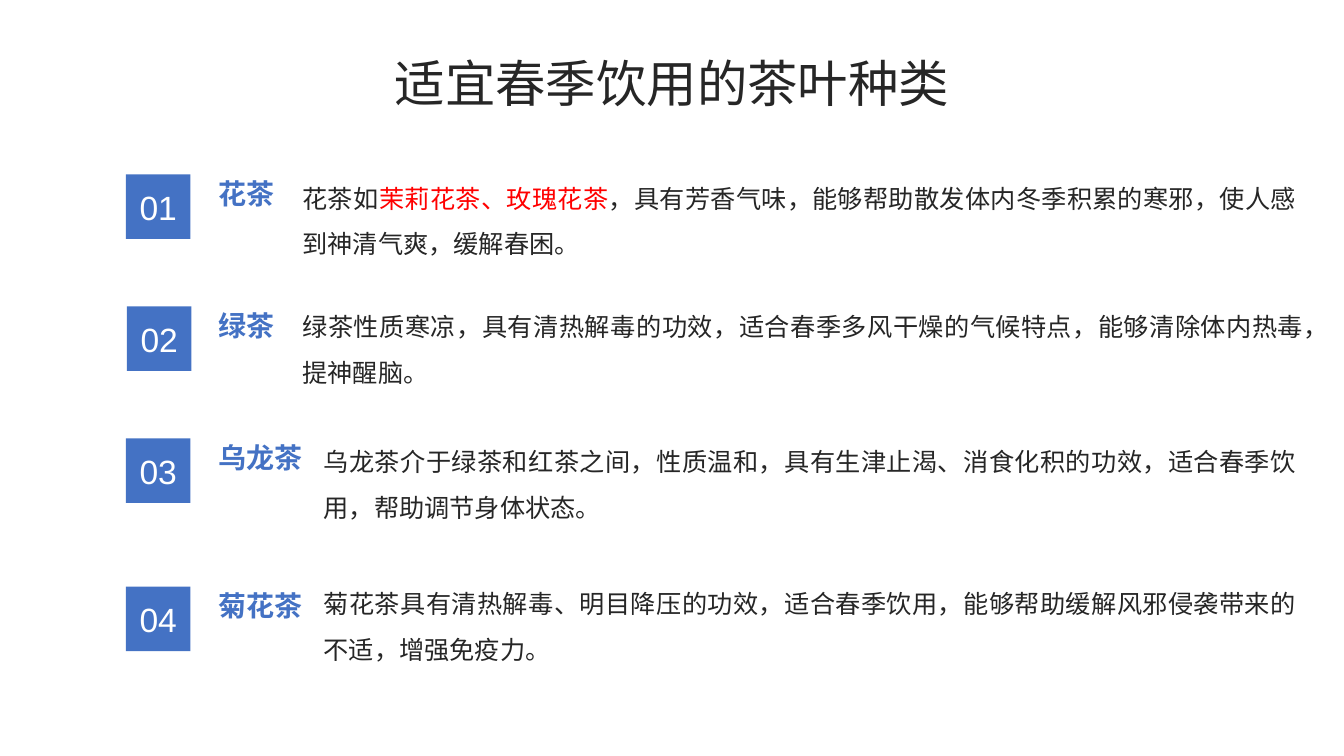
from lxml import etree
from pptx import Presentation, util as u
from pptx.dml.color import RGBColor
from pptx.enum import shapes, text
from pptx.oxml.ns import qn

HUES = {"ink": "262626", "blue": "4472C4", "red": "FF0000", "white": "FFFFFF"}
SANS = "Noto Sans CJK SC"
ALIGN, ANCHOR = text.PP_ALIGN, text.MSO_ANCHOR


def add_run(para, words, size, hue, face=SANS, bold=False):
    run = para.add_run()
    run.text = words
    font = run.font
    font.size, font.name, font.bold = u.Pt(size), face, bold
    font.color.rgb = RGBColor.from_string(HUES[hue])
    props = run._r.get_or_add_rPr()
    props.set("lang", "zh-CN")
    etree.SubElement(props, qn("a:ea")).set("typeface", SANS)


def set_up(shape, align, anchor, gap=1.0):
    frame = shape.text_frame
    frame.word_wrap = True
    frame.auto_size = text.MSO_AUTO_SIZE.NONE
    frame.vertical_anchor = anchor
    frame.margin_left = frame.margin_right = 0
    frame.margin_top = frame.margin_bottom = 0
    para = frame.paragraphs[0]
    para.alignment, para.line_spacing = align, gap
    return para


deck = Presentation()
deck.slide_width, deck.slide_height = u.Inches(13.33), u.Inches(7.5)
slide = deck.slides.add_slide(deck.slide_layouts[5])

# Title
title = slide.shapes.title
title.left, title.top = u.Inches(0.76), u.Inches(0.53)
title.width, title.height = u.Inches(11.81), u.Inches(0.66)
add_run(set_up(title, ALIGN.CENTER, ANCHOR.MIDDLE, 0.9),
        "适宜春季饮用的茶叶种类", 36, "ink")

# Teas: name, badge left and top, note box, note runs
teas = [
    ("花茶", 1.25, 1.73, (3, 1.67, 9.86, 0.93), [
        ("花茶如", "ink"),
        ("茉莉花茶、玫瑰花茶", "red"),
        ("，具有芳香气味，能够帮助散发体内冬季积累的寒邪，使人感到神清气爽，缓解春困。", "ink")]),
    ("绿茶", 1.26, 3.04, (3, 2.94, 9.94, 1.01), [
        ("绿茶性质寒凉，具有清热解毒的功效，适合春季多风干燥的气候特点，能够清除体内热毒，提神醒脑。", "ink")]),
    ("乌龙茶", 1.25, 4.35, (3.21, 4.28, 9.65, 1.14), [
        ("乌龙茶介于绿茶和红茶之间，性质温和，具有生津止渴、消食化积的功效，适合春季饮用，帮助调节身体状态。", "ink")]),
    ("菊花茶", 1.25, 5.82, (3.21, 5.69, 9.65, 1.02), [
        ("菊花茶具有清热解毒、明目降压的功效，适合春季饮用，能够帮助缓解风邪侵袭带来的不适，增强免疫力。", "ink")]),
]

for num, (name, left, top, place, parts) in enumerate(teas, 1):
    # Note
    note = slide.shapes.add_textbox(*map(u.Inches, place))
    para = set_up(note, ALIGN.JUSTIFY, ANCHOR.TOP, 1.5)
    for words, hue in parts:
        add_run(para, words, 18, hue)

    # Tea name
    head = slide.shapes.add_textbox(
        u.Inches(2.17), u.Inches(top - 0.07), u.Inches(9.94), u.Inches(0.51))
    add_run(set_up(head, ALIGN.JUSTIFY, ANCHOR.MIDDLE),
            name, 20, "blue", "Arial", True)

    # Number badge
    badge = slide.shapes.add_shape(
        shapes.MSO_SHAPE.RECTANGLE, u.Inches(left), u.Inches(top),
        u.Inches(0.64), u.Inches(0.64))
    badge.shadow.inherit = False
    badge.fill.solid()
    badge.fill.fore_color.rgb = RGBColor.from_string(HUES["blue"])
    badge.line.fill.background()
    add_run(set_up(badge, ALIGN.CENTER, ANCHOR.MIDDLE),
            f"{num:02}", 24, "white", "Arial")

deck.save("out.pptx")
